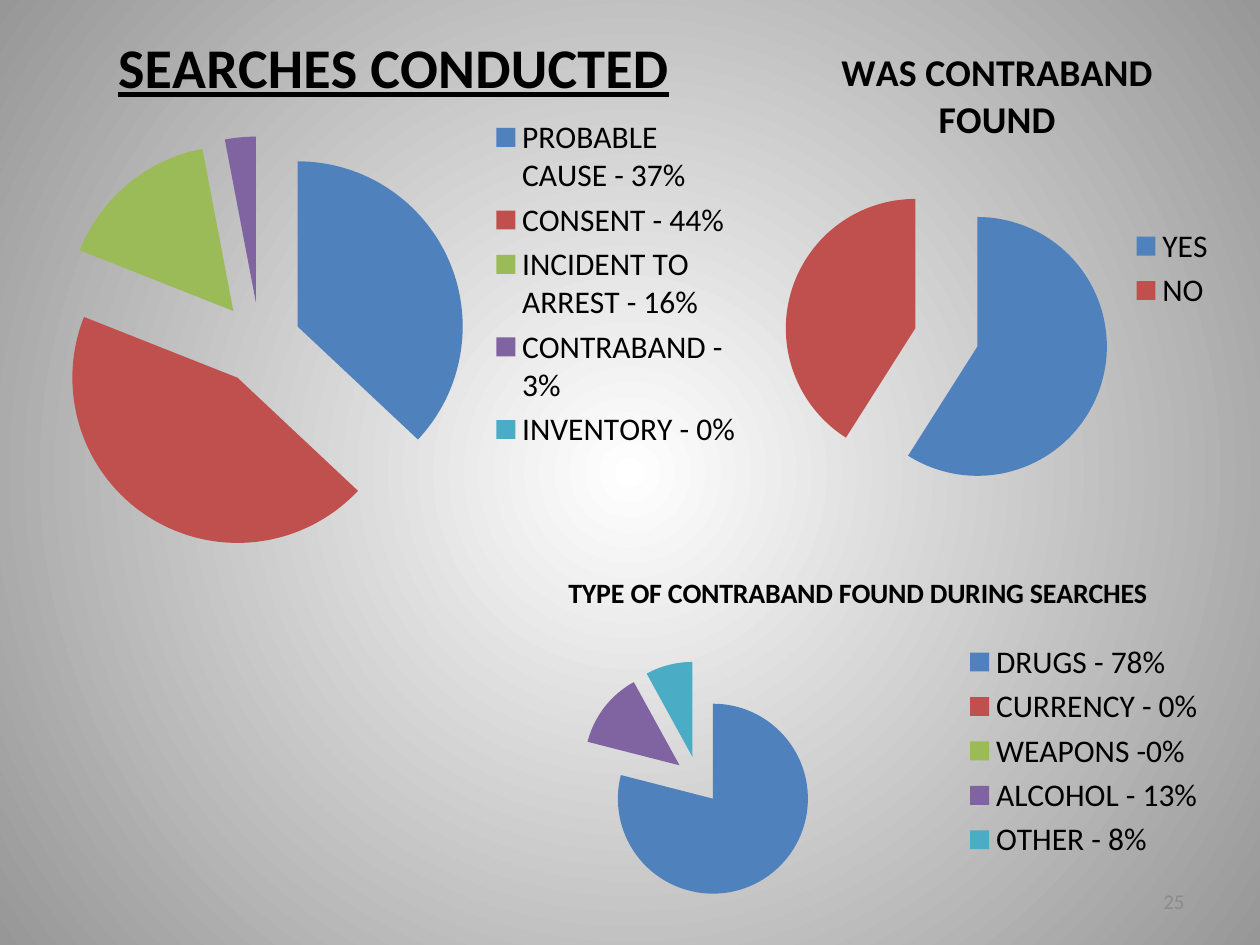
from lxml import etree
from pptx import Presentation
from pptx import util as u
from pptx.chart.data import CategoryChartData
from pptx.dml.color import RGBColor
from pptx.enum import chart as ch, text
from pptx.oxml import parse_xml
from pptx.oxml.ns import nsdecls, qn

FONT = "Calibri"
BLACK = RGBColor(0, 0, 0)
GRAY = RGBColor(0x8B, 0x8B, 0x8B)
SLICES = [RGBColor.from_string(c) for c in
          ("4F81BD", "C0504D", "9BBB59", "8064A2", "4BACC6")]


def set_background(slide):
    """Radial gradient, white in the centre."""
    background = parse_xml(
        f'<p:bg {nsdecls("p", "a")}><p:bgPr><a:gradFill rotWithShape="1"><a:gsLst>'
        '<a:gs pos="0"><a:srgbClr val="FFFFFF"/></a:gs>'
        '<a:gs pos="100000"><a:srgbClr val="979797"/></a:gs></a:gsLst>'
        '<a:path path="circle"><a:fillToRect l="50000" t="50000" r="50000" b="50000"/>'
        '</a:path></a:gradFill><a:effectLst/></p:bgPr></p:bg>')
    slide.element.find(qn("p:cSld")).insert(0, background)


def style_font(font, size, color=BLACK):
    font.name = FONT
    font.size = u.Pt(size)
    font.color.rgb = color


def set_layout(parent, **places):
    """Place a chart part by fractions of the chart area."""
    for old in parent.findall(qn("c:layout")):
        parent.remove(old)
    layout = etree.Element(qn("c:layout"))
    manual = etree.SubElement(layout, qn("c:manualLayout"))
    modes = {"xMode": "edge", "yMode": "edge"}
    if "w" in places:
        modes = {"layoutTarget": "inner", **modes}
    for name, value in {**modes, **places}.items():
        etree.SubElement(manual, qn(f"c:{name}")).set("val", str(value))
    before = parent.find(qn("c:tx"))
    parent.insert(0 if before is None else 1, layout)


def add_pie(slide, place, title, title_size, slices, plot):
    """Exploded pie with a title and a legend on the right."""
    data = CategoryChartData()
    data.categories = [name for name, _ in slices]
    data.add_series(title, [value for _, value in slices])
    chart = slide.shapes.add_chart(
        ch.XL_CHART_TYPE.PIE, *map(u.Inches, place), data).chart
    style_font(chart.font, 18)

    # Title
    chart.has_title = True
    chart.chart_title.include_in_layout = False
    frame = chart.chart_title.text_frame
    frame.text = title
    span = frame.paragraphs[0].runs[0]
    style_font(span.font, title_size)
    span.font.bold = True

    # Legend
    chart.has_legend = True
    chart.legend.position = ch.XL_LEGEND_POSITION.RIGHT
    chart.legend.include_in_layout = False
    style_font(chart.legend.font, 18)

    # Slices
    pie = chart.plots[0]
    pie.vary_by_categories = True
    series = pie.series[0]
    explosion = etree.Element(qn("c:explosion"))
    explosion.set("val", "25")
    series._element.find(qn("c:tx")).addnext(explosion)
    for index, color in enumerate(SLICES[:len(slices)]):
        fill = series.points[index].format.fill
        fill.solid()
        fill.fore_color.rgb = color
    area = chart._chartSpace.find(".//" + qn("c:plotArea"))
    set_layout(area, **dict(zip("xywh", plot)))
    return chart


def add_slide_number(slide, number):
    box = slide.shapes.add_textbox(*map(u.Inches, (7.17, 6.95, 2.33, 0.4)))
    frame = box.text_frame
    frame.word_wrap = True
    frame.vertical_anchor = text.MSO_ANCHOR.MIDDLE
    frame.text = number
    para = frame.paragraphs[0]
    para.alignment = text.PP_ALIGN.RIGHT
    style_font(para.runs[0].font, 12, GRAY)


def main():
    deck = Presentation()
    deck.slide_width, deck.slide_height = u.Inches(10), u.Inches(7.5)
    slide = deck.slides.add_slide(deck.slide_layouts[6])
    set_background(slide)

    searches = add_pie(
        slide, (0.25, 0, 5.75, 4.5), "SEARCHES CONDUCTED", 32,
        [("PROBABLE CAUSE - 37%", 37), ("CONSENT - 44%", 44),
         ("INCIDENT TO ARREST - 16%", 16), ("CONTRABAND - 3%", 3),
         ("INVENTORY - 0%", 0)],
        (0.03, 0.24, 0.57, 0.73))
    searches.chart_title.text_frame.paragraphs[0].runs[0].font.underline = True

    add_pie(slide, (6.08, 0.17, 3.67, 3.92), "WAS CONTRABAND FOUND", 21.6,
            [("YES", 59), ("NO", 41)], (0.04, 0.31, 0.7, 0.66))

    contraband = add_pie(
        slide, (3.17, 4.42, 6.5, 3.08),
        "TYPE OF CONTRABAND FOUND DURING SEARCHES", 16,
        [("DRUGS - 78%", 79), ("CURRENCY - 0%", 0), ("WEAPONS -0%", 0),
         ("ALCOHOL - 13%", 13), ("OTHER - 8%", 8)],
        (0.22, 0.19, 0.29, 0.77))
    set_layout(contraband.chart_title._element, x=0.2, y=0.03)

    add_slide_number(slide, "25")
    deck.save("out.pptx")


if __name__ == "__main__":
    main()
